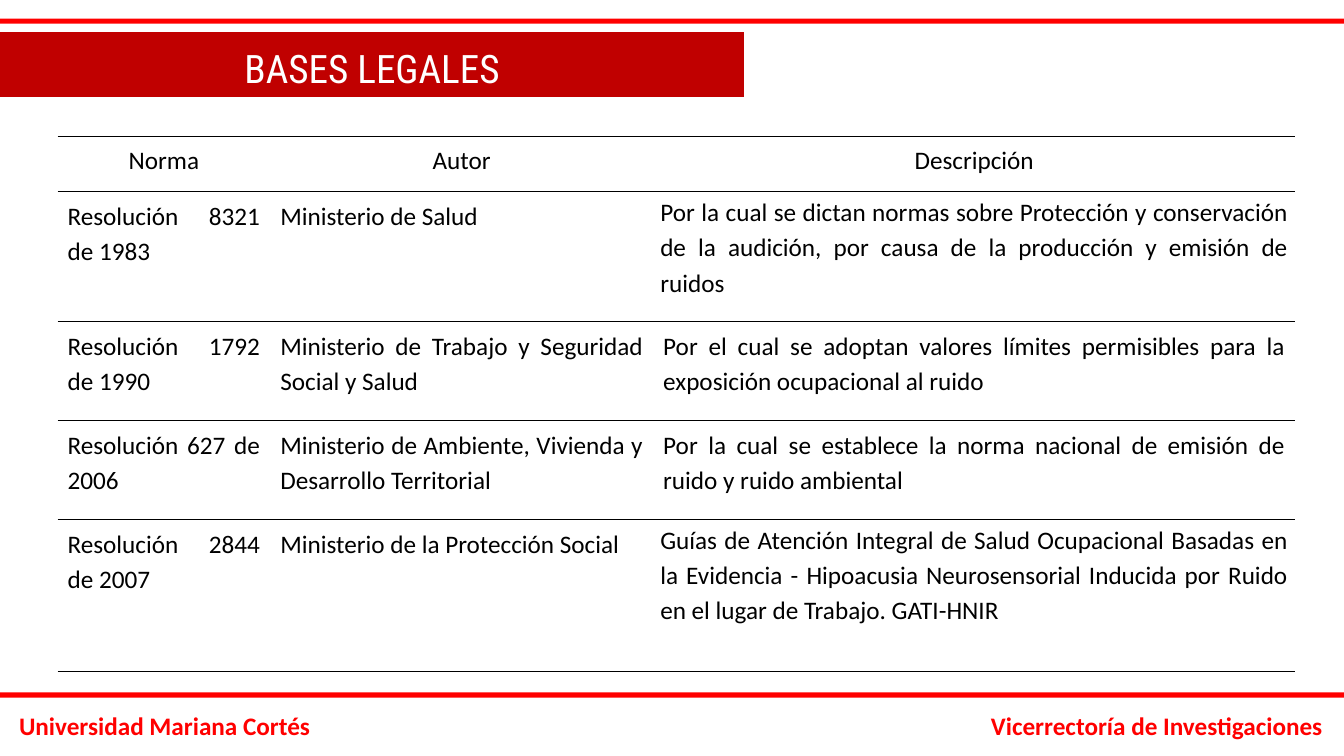
from dataclasses import dataclass

from lxml.etree import SubElement
from pptx import Presentation
from pptx.dml.color import RGBColor
from pptx.enum.shapes import MSO_SHAPE
from pptx.enum.text import MSO_ANCHOR, PP_ALIGN
from pptx.oxml.ns import qn
from pptx.util import Cm, Pt


@dataclass(frozen=True)
class Theme:
    red: str = "FF0000"
    dark_red: str = "C00000"
    black: str = "000000"
    white: str = "FFFFFF"
    body_font: str = "Calibri"
    title_font: str = "Roboto Condensed"
    body_size: int = 18
    title_size: int = 28
    rule_width: int = 1


THEME = Theme()
SLIDE_WIDTH, SLIDE_HEIGHT = 33.87, 19.05
COLUMN_WIDTHS = [5.36, 9.65, 16.18]
ROW_HEIGHTS = [1.4, 3.28, 2.49, 2.49, 3.84]
TIGHT_MARGINS = {"margin_left": Cm(0.18), "margin_right": Cm(0.18),
                 "margin_top": Cm(0.03), "margin_bottom": Cm(0)}

HEADINGS = ("Norma", "Autor", "Descripción")
NORMS = [
    ("Resolución 8321 de 1983", "Ministerio de Salud",
     "Por la cual se dictan normas sobre Protección y conservación de la "
     "audición, por causa de la producción y emisión de ruidos"),
    ("Resolución 1792 de 1990",
     "Ministerio de Trabajo y Seguridad Social y Salud",
     "Por el cual se adoptan valores límites permisibles para la exposición "
     "ocupacional al ruido"),
    ("Resolución 627 de 2006",
     "Ministerio de Ambiente, Vivienda y Desarrollo Territorial",
     "Por la cual se establece la norma nacional de emisión de ruido y ruido "
     "ambiental"),
    ("Resolución 2844 de 2007", "Ministerio de la Protección Social",
     "Guías de Atención Integral de Salud Ocupacional Basadas en la Evidencia "
     "- Hipoacusia Neurosensorial Inducida por Ruido en el lugar de Trabajo. "
     "GATI-HNIR"),
]
TIGHT_CELLS = {(1, 2), (4, 2)}


def set_attributes(target, values):
    for attribute, value in values.items():
        setattr(target, attribute, value)


def write(frame, text, color, align, line_spacing=1.0, **font):
    paragraph = frame.paragraphs[0]
    set_attributes(paragraph, {"alignment": align, "line_spacing": line_spacing})
    run = paragraph.add_run()
    run.text = text
    set_attributes(run.font, {"name": THEME.body_font,
                              "size": Pt(THEME.body_size),
                              "bold": False, **font})
    run.font.color.rgb = RGBColor.from_string(color)


def add_block(slide, box, color):
    block = slide.shapes.add_shape(MSO_SHAPE.RECTANGLE, *map(Cm, box))
    block.shadow.inherit = False
    block.fill.solid()
    block.fill.fore_color.rgb = RGBColor.from_string(color)
    block.line.fill.background()
    return block


def add_frame_bars(slide, box):
    """Red bars along the top and bottom edges of the box."""
    left, top, width, height = box
    thickness = 0.13
    for bar_top in (top, top + height - thickness):
        add_block(slide, (left, bar_top, width, thickness), THEME.red)


def add_footer(slide, box):
    left, top, width, height = box
    half = width / 2
    labels = [("Universidad Mariana Cortés", PP_ALIGN.LEFT),
              ("Vicerrectoría de Investigaciones", PP_ALIGN.RIGHT)]
    for index, (label, align) in enumerate(labels):
        signature = slide.shapes.add_textbox(
            Cm(left + index * half), Cm(top), Cm(half), Cm(height))
        signature.text_frame.word_wrap = True
        write(signature.text_frame, label, THEME.red, align, bold=True)


def add_banner(slide, box):
    banner = add_block(slide, box, THEME.dark_red)
    set_attributes(banner.text_frame, {"word_wrap": True,
                                       "vertical_anchor": MSO_ANCHOR.BOTTOM})
    write(banner.text_frame, "BASES LEGALES", THEME.white, PP_ALIGN.CENTER, 0.9,
          name=THEME.title_font, size=Pt(THEME.title_size))


def rule_cell(cell):
    """Horizontal rules above and below, none at the sides."""
    properties = cell._tc.get_or_add_tcPr()
    for side in ("L", "R", "T", "B"):
        border = SubElement(properties, qn(f"a:ln{side}"))
        if side in "LR":
            SubElement(border, qn("a:noFill"))
        else:
            border.set("w", str(Pt(THEME.rule_width)))
            fill = SubElement(border, qn("a:solidFill"))
            SubElement(fill, qn("a:srgbClr"), val=THEME.black)
    cell.fill.background()


def add_norms_table(slide, left, top):
    rows = [HEADINGS, *NORMS]
    table = slide.shapes.add_table(
        len(rows), len(HEADINGS), Cm(left), Cm(top),
        Cm(sum(COLUMN_WIDTHS)), Cm(sum(ROW_HEIGHTS))).table
    set_attributes(table, {"first_row": False, "horz_banding": False})
    for column, width in zip(table.columns, COLUMN_WIDTHS):
        column.width = Cm(width)
    for row, height in zip(table.rows, ROW_HEIGHTS):
        row.height = Cm(height)
    for r, entries in enumerate(rows):
        align = PP_ALIGN.JUSTIFY if r else PP_ALIGN.CENTER
        for c, entry in enumerate(entries):
            cell = table.cell(r, c)
            rule_cell(cell)
            if (r, c) in TIGHT_CELLS:
                set_attributes(cell, TIGHT_MARGINS)
            write(cell.text_frame, entry, THEME.black, align, 1.15)


def main():
    deck = Presentation()
    set_attributes(deck, {"slide_width": Cm(SLIDE_WIDTH),
                          "slide_height": Cm(SLIDE_HEIGHT)})
    slide = deck.slides.add_slide(deck.slide_layouts[6])
    add_frame_bars(slide, (0, 0.47, SLIDE_WIDTH, 17.11))
    add_footer(slide, (0.23, 17.78, 33.35, 1.02))
    add_banner(slide, (0, 0.81, 18.75, 1.63))
    add_norms_table(slide, 1.45, 3.43)
    deck.save("out.pptx")


if __name__ == "__main__":
    main()
